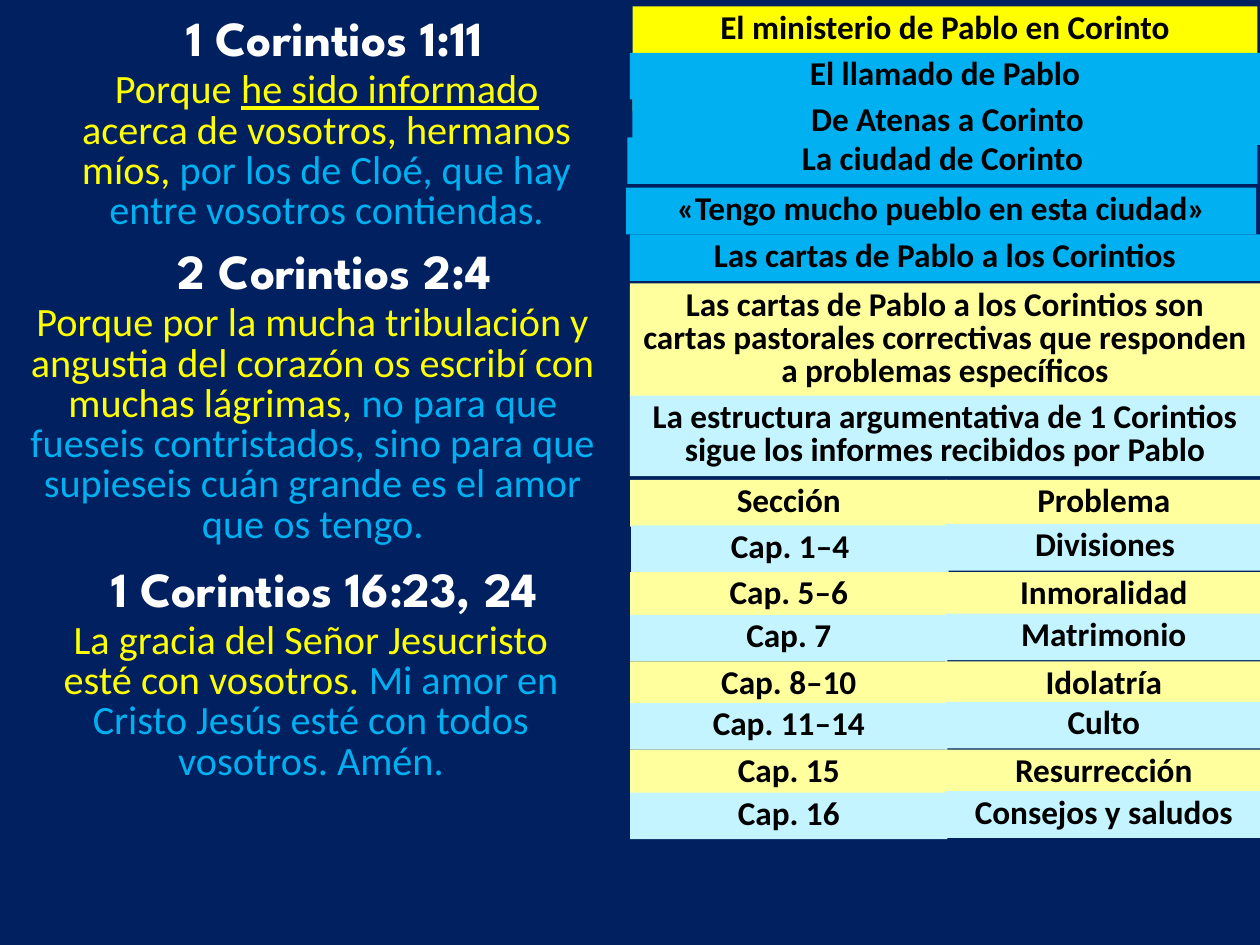
import dataclasses

import pptx
import pptx.dml.color
import pptx.enum.shapes
import pptx.enum.text
import pptx.util


@dataclasses.dataclass(frozen=True)
class Theme:
    navy: str = "002060"
    gold: str = "FFFF00"
    blue: str = "00B0F0"
    cream: str = "FFFF9E"
    ice: str = "C3F4FF"
    white: str = "FFFFFF"
    black: str = "000000"
    sans: str = "Calibri"
    display: str = "League Spartan"
    band: int = 19
    verse: int = 23
    head: int = 28


COLS, ROWS = 100, 75
LINE = 3.7  # height in rows of a band with one line of text


def tint(name):
    return pptx.dml.color.RGBColor.from_string(name)


def write(shape, runs, size, font, color, bold=False, lead=None):
    """Fill a shape with one centred paragraph; a run is (text, format)."""
    frame = shape.text_frame
    frame.word_wrap = True
    frame.auto_size = pptx.enum.text.MSO_AUTO_SIZE.SHAPE_TO_FIT_TEXT
    frame.vertical_anchor = pptx.enum.text.MSO_ANCHOR.TOP
    para = frame.paragraphs[0]
    para.alignment = pptx.enum.text.PP_ALIGN.CENTER
    if lead:
        para.line_spacing = pptx.util.Pt(lead)
    for text, look in runs:
        run = para.add_run()
        run.text = text
        run.font.name = font
        run.font.size = pptx.util.Pt(size)
        run.font.bold = bold
        run.font.underline = look.get("line", False)
        run.font.color.rgb = tint(look.get("color", color))


class Deck:
    def __init__(self, theme):
        self.theme = theme
        self.show = pptx.Presentation()
        self.show.slide_width = pptx.util.Inches(10)
        self.show.slide_height = pptx.util.Inches(7.5)
        self.slide = self.show.slides.add_slide(self.show.slide_layouts[5])
        fill = self.slide.background.fill
        fill.solid()
        fill.fore_color.rgb = tint(theme.navy)

    def place(self, box):
        """Turn left, top, width, height in columns and rows into lengths."""
        wide = self.show.slide_width / COLS
        high = self.show.slide_height / ROWS
        return [pptx.util.Emu(round(n * unit))
                for n, unit in zip(box, (wide, high, wide, high))]

    def paint(self, shape, text, color):
        shape.fill.solid()
        shape.fill.fore_color.rgb = tint(color)
        shape.line.fill.background()
        t = self.theme
        write(shape, [(text, {})], t.band, t.sans, t.black,
              bold=True, lead=t.band)

    def title(self, text, box, color):
        shape = self.slide.shapes.title
        shape.left, shape.top, shape.width, shape.height = self.place(box)
        self.paint(shape, text, color)

    def band(self, text, box, color):
        rect = pptx.enum.shapes.MSO_SHAPE.RECTANGLE
        shape = self.slide.shapes.add_shape(rect, *self.place(box))
        shape.shadow.inherit = False
        self.paint(shape, text, color)

    def head(self, text, box):
        t = self.theme
        shape = self.slide.shapes.add_textbox(*self.place(box))
        write(shape, [(text, {})], t.head, t.display, t.white, bold=True)

    def verse(self, runs, box):
        t = self.theme
        shape = self.slide.shapes.add_textbox(*self.place(box))
        write(shape, runs, t.verse, t.sans, t.gold, lead=t.verse)

    def save(self):
        self.show.save("out.pptx")


def main():
    t = Theme()
    deck = Deck(t)
    deck.title("El ministerio de Pablo en Corinto", (50.2, 0.5, 49.6, LINE), t.gold)

    bands = [
        ("El llamado de Pablo", 50, 4.2, LINE, t.blue),
        ("De Atenas a Corinto", 50.2, 7.8, LINE, t.blue),
        ("La ciudad de Corinto", 49.8, 10.9, LINE, t.blue),
        ("«Tengo mucho pueblo en esta ciudad»", 49.7, 14.9, LINE, t.blue),
        ("Las cartas de Pablo a los Corintios", 50, 18.6, LINE, t.blue),
        ("Las cartas de Pablo a los Corintios son cartas pastorales "
         "correctivas que responden a problemas específicos",
         50, 22.5, 9, t.cream),
        ("La estructura argumentativa de 1 Corintios sigue los informes "
         "recibidos por Pablo", 50, 31.4, 6.4, t.ice),
    ]
    for text, left, top, high, color in bands:
        deck.band(text, (left, top, 50, high), color)

    pairs = [
        ("Sección", "Problema", 38.1),
        ("Cap. 1–4", "Divisiones", 41.7),
        ("Cap. 5–6", "Inmoralidad", 45.4),
        ("Cap. 7", "Matrimonio", 48.8),
        ("Cap. 8–10", "Idolatría", 52.5),
        ("Cap. 11–14", "Culto", 55.8),
        ("Cap. 15", "Resurrección", 59.5),
        ("Cap. 16", "Consejos y saludos", 62.9),
    ]
    for i, (part, topic, top) in enumerate(pairs):
        odd = i % 2
        color = t.ice if odd else t.cream
        nudge = 0.1 if i == 1 else 0
        deck.band(part, (50 + nudge, top, 25.2, LINE), color)
        deck.band(topic, (75 + nudge, top - 0.1 * odd, 25.2, LINE), color)

    blue = {"color": t.blue}
    verses = [
        ("1 Corintios 1:11", (3.3, 0.1), (4.3, 5.2, 43.3, 14), [
            ("Porque ", {}),
            ("he sido informado", {"line": True}),
            (" acerca de vosotros, hermanos míos, ", {}),
            ("por los de Cloé, que hay entre vosotros contiendas.", blue)]),
        ("2 Corintios 2:4", (3.3, 18.6), (0, 23.7, 49.7, 20.4), [
            ("Porque por la mucha tribulación y angustia del corazón os "
             "escribí con muchas lágrimas, ", {}),
            ("no para que fueseis contristados, sino para que supieseis "
             "cuán grande es el amor que os tengo.", blue)]),
        ("1 Corintios 16:23, 24", (2.5, 43.8), (3.4, 48.9, 42.6, 14), [
            ("La gracia del Señor Jesucristo esté con vosotros. ", {}),
            ("Mi amor en Cristo Jesús esté con todos vosotros. Amén.", blue)]),
    ]
    for name, spot, box, runs in verses:
        deck.head(name, (*spot, 46.5, 5.7))
        deck.verse(runs, box)
    deck.save()


if __name__ == "__main__":
    main()
